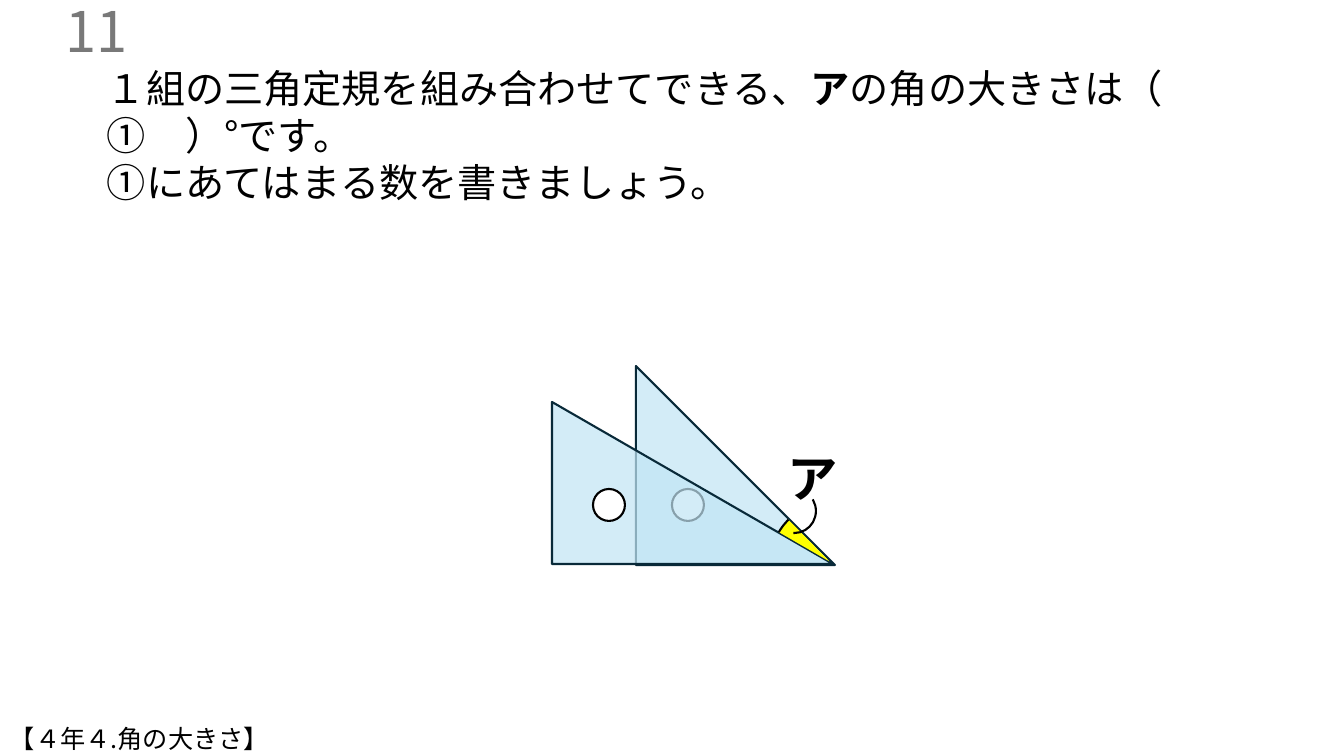
from lxml import etree
from pptx import Presentation
from pptx.dml.color import RGBColor
from pptx.enum.shapes import MSO_SHAPE
from pptx.enum.text import MSO_ANCHOR, MSO_AUTO_SIZE, PP_ALIGN
from pptx.oxml.ns import qn
from pptx.util import Emu, Pt

TRIANGLE, CIRCLE, ARC = MSO_SHAPE.RIGHT_TRIANGLE, MSO_SHAPE.OVAL, MSO_SHAPE.ARC
TOP, MIDDLE = MSO_ANCHOR.TOP, MSO_ANCHOR.MIDDLE
LEFT, RIGHT = PP_ALIGN.LEFT, PP_ALIGN.RIGHT
GROW, FIXED = MSO_AUTO_SIZE.SHAPE_TO_FIT_TEXT, MSO_AUTO_SIZE.NONE

BLACK = RGBColor(0x00, 0x00, 0x00)
WHITE = RGBColor(0xFF, 0xFF, 0xFF)
GRAY = RGBColor(0x79, 0x79, 0x79)
NAVY = RGBColor(0x09, 0x2A, 0x39)
PALE_BLUE = RGBColor(0xC1, 0xE5, 0xF5)
YELLOW = RGBColor(0xFF, 0xFF, 0x00)

FONT = "Noto Sans CJK JP"
EMU_PER_INCH = 914400
PX_PER_INCH = 100.8
HOLE_TOP, HOLE_SIZE = 489, 32


def px(length):
    return Emu(round(length * EMU_PER_INCH / PX_PER_INCH))


def add_text(page, frame, paragraphs, size, color=BLACK, bold=False,
             align=LEFT, anchor=TOP, autosize=GROW):
    """Each paragraph is a list of spans; a (text, True) span is bold."""
    box = page.shapes.add_textbox(*map(px, frame))
    text = box.text_frame
    text.word_wrap = True
    text.auto_size = autosize
    text.vertical_anchor = anchor
    for index, spans in enumerate(paragraphs):
        para = text.add_paragraph() if index else text.paragraphs[0]
        para.alignment = align
        for words, strong in spans:
            span = para.add_run()
            span.text = words
            span.font.name = FONT
            span.font.size = Pt(size)
            span.font.bold = bold or strong
            span.font.color.rgb = color
            east_asian = etree.SubElement(span.font._element, qn("a:ea"))
            east_asian.set("typeface", FONT)


def add_figure(page, kind, frame, fill=None, line=BLACK, opacity=100):
    figure = page.shapes.add_shape(kind, *map(px, frame))
    figure.shadow.inherit = False
    figure.line.color.rgb = line
    figure.line.width = Pt(1.5)
    if fill is None:
        figure.fill.background()
    else:
        figure.fill.solid()
        figure.fill.fore_color.rgb = fill
        if opacity < 100:
            color = figure._element.spPr.find(qn("a:solidFill"))[0]
            alpha = etree.SubElement(color, qn("a:alpha"))
            alpha.set("val", str(opacity * 1000))
    return figure


def add_set_square(page, frame):
    add_figure(page, TRIANGLE, frame, PALE_BLUE, NAVY, opacity=70)


def add_hole(page, left):
    add_figure(page, CIRCLE, (left, HOLE_TOP, HOLE_SIZE, HOLE_SIZE), WHITE)


def add_arc(page, frame, start, end, fill=None):
    arc = add_figure(page, ARC, frame, fill)
    # Angles are stored in 60000ths of a degree, adjustments in 100000ths
    for index, degrees in enumerate((start, end)):
        arc.adjustments[index] = degrees * 0.6


def main():
    deck = Presentation()
    deck.slide_width, deck.slide_height = px(1344), px(756)
    page = deck.slides.add_slide(deck.slide_layouts[6])

    # Question and its number
    add_text(page, (97, 59, 1162, 152), [
        [("１組の三角定規を組み合わせてできる、", False), ("ア", True),
         ("の角の大きさは（　①　）°です。", False)],
        [("①にあてはまる数を書きましょう。", False)],
    ], 28)
    add_text(page, (-164, 10, 302, 40), [[("11", False)]], 40, GRAY,
             align=RIGHT, anchor=MIDDLE, autosize=FIXED)

    # Overlapping set squares
    add_set_square(page, (636, 366, 199, 199))
    add_hole(page, 672)
    add_set_square(page, (552, 402, 281, 162))

    # Marked angle with its label and leader
    add_arc(page, (771, 503, 117, 117), 210.1, 225.5, YELLOW)
    add_text(page, (778, 442, 65, 72), [[("ア", False)]], 36, bold=True)
    add_arc(page, (773, 489, 43, 44), 327.6, 92.5)
    add_hole(page, 593)

    # Unit name
    add_text(page, (0, 718, 755, 40), [[("【４年４.角の大きさ】", False)]], 18)

    deck.save("out.pptx")


if __name__ == "__main__":
    main()
